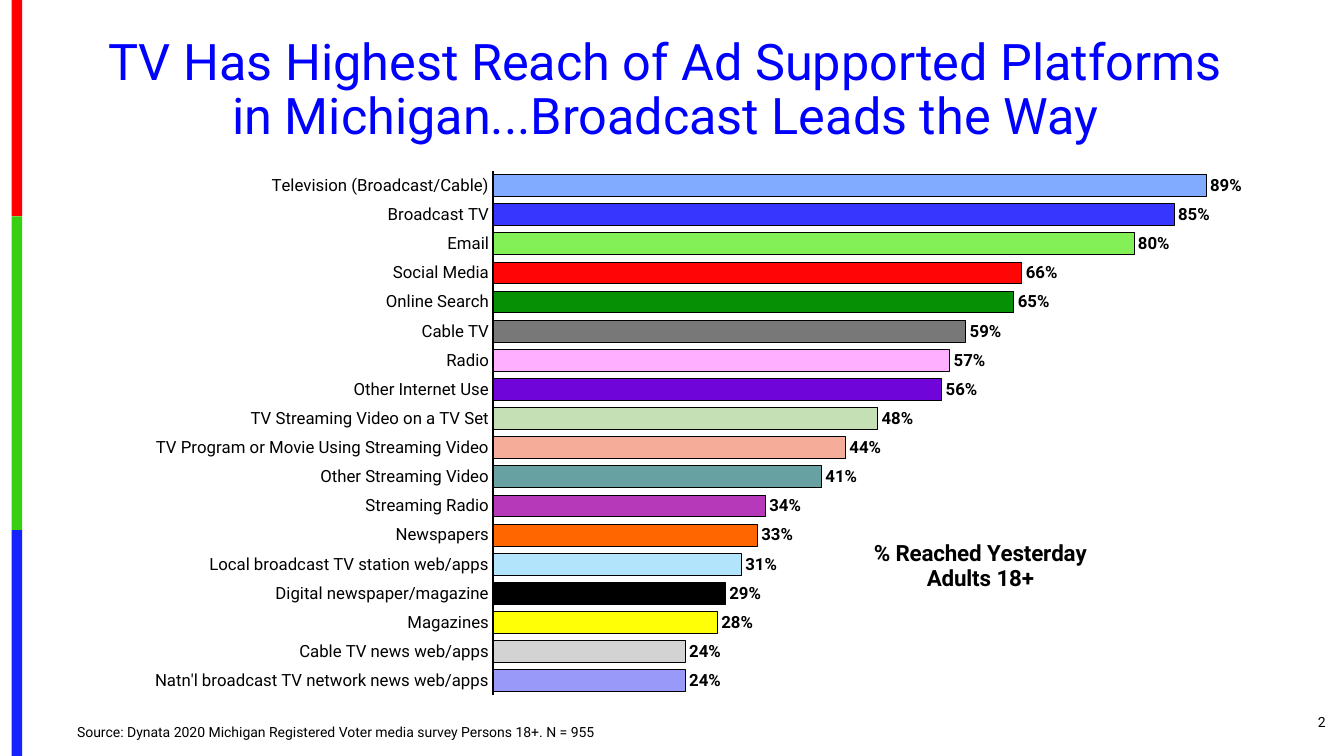
from lxml import etree
from pptx import Presentation
from pptx import util as u
from pptx.chart.data import CategoryChartData
from pptx.dml.color import RGBColor
from pptx.enum import chart as ch, shapes, text
from pptx.oxml.ns import qn

PX = 9525
FACE = "Roboto"
HUES = {"red": "FE0000", "green": "36CF12", "blue": "1322FE",
        "head": "0000FF", "ink": "000000", "base": "CCCCCC"}
ROWS = [
    ("Television (Broadcast/Cable)", 0.89, "80ABFF"),
    ("Broadcast TV", 0.85, "3636FF"),
    ("Email", 0.80, "84F058"),
    ("Social Media", 0.66, "FF0505"),
    ("Online Search", 0.65, "059005"),
    ("Cable TV", 0.59, "787878"),
    ("Radio", 0.57, "FFAFFF"),
    ("Other Internet Use", 0.56, "6F05D9"),
    ("TV Streaming Video on a TV Set", 0.48, "C5E0B4"),
    ("TV Program or Movie Using Streaming Video", 0.44, "F5AD99"),
    ("Other Streaming Video", 0.41, "67A1A1"),
    ("Streaming Radio", 0.34, "B539B8"),
    ("Newspapers", 0.33, "FF6600"),
    ("Local broadcast TV station web/apps", 0.31, "B2E5FC"),
    ("Digital newspaper/magazine", 0.29, "000000"),
    ("Magazines", 0.28, "FFFF05"),
    ("Cable TV news web/apps", 0.24, "D3D3D3"),
    ("Natn'l broadcast TV network news web/apps", 0.24, "9999F9"),
]


def style(font, size, hue="ink", bold=False):
    look = {"name": FACE, "size": u.Pt(size), "bold": bold}
    for key, val in look.items():
        setattr(font, key, val)
    font.color.rgb = RGBColor.from_string(HUES[hue])


def place(node, **spots):
    lay = node.find(qn("c:layout"))
    if lay is None:
        lay = etree.Element(qn("c:layout"))
        node.insert(1 if node.tag == qn("c:title") else 0, lay)
    man = etree.SubElement(lay, qn("c:manualLayout"))
    for key, val in spots.items():
        etree.SubElement(man, qn("c:" + key)).set("val", str(val))


prs = Presentation()
prs.slide_width, prs.slide_height = 1280 * PX, 720 * PX
slide = prs.slides.add_slide(prs.slide_layouts[6])

edges = [0, 206, 505, 720]
for hue, top, end in zip(("red", "green", "blue"), edges, edges[1:]):
    band = slide.shapes.add_shape(shapes.MSO_SHAPE.RECTANGLE,
                                  11 * PX, top * PX, 10 * PX, (end - top) * PX)
    band.shadow.inherit = False
    band.fill.solid()
    band.fill.fore_color.rgb = RGBColor.from_string(HUES[hue])
    band.line.fill.background()

data = CategoryChartData(number_format="0%")
data.categories = [row[0] for row in ROWS]
data.add_series("Series 1", [row[1] for row in ROWS])
chart = slide.shapes.add_chart(ch.XL_CHART_TYPE.BAR_CLUSTERED, 65 * PX, 136 * PX,
                               1176 * PX, 528 * PX, data).chart
style(chart.font, 10)
chart.has_legend = False
chart.has_title = True
frame = chart.chart_title.text_frame
frame.text = "% Reached Yesterday\nAdults 18+"
for para in frame.paragraphs:
    style(para.runs[0].font, 16, bold=True)
chart.chart_title.include_in_layout = False
place(chart.chart_title._element, xMode="edge", yMode="edge", x=0.65, y=0.71)
place(chart._chartSpace.chart.plotArea, layoutTarget="inner", xMode="edge",
      yMode="edge", x=0.344, y=0.051, w=0.649, h=0.946)

cats = chart.category_axis
cats.reverse_order = True
cats.major_tick_mark = ch.XL_TICK_MARK.NONE
cats.format.line.width = u.Pt(1)
cats.format.line.color.rgb = RGBColor.from_string(HUES["ink"])
style(cats.tick_labels.font, 12)
vals = chart.value_axis
for key, val in {"minimum_scale": 0, "maximum_scale": 1, "visible": False,
                 "has_major_gridlines": False}.items():
    setattr(vals, key, val)

plot = chart.plots[0]
plot.gap_width = 34
plot.vary_by_categories = False
plot.has_data_labels = True
tags = plot.data_labels
for key, val in {"show_value": True, "number_format": "0%",
                 "number_format_is_linked": False,
                 "position": ch.XL_LABEL_POSITION.OUTSIDE_END}.items():
    setattr(tags, key, val)
style(tags.font, 12, bold=True)
bars = plot.series[0]
bars.invert_if_negative = False
fills = [(bars.format, HUES["base"])]
fills += [(bars.points[i].format, row[2]) for i, row in enumerate(ROWS)]
for form, tint in fills:
    form.fill.solid()
    form.fill.fore_color.rgb = RGBColor.from_string(tint)
    form.line.width = u.Pt(0.75)
    form.line.color.rgb = RGBColor.from_string(HUES["ink"])

MID, LOW = text.MSO_ANCHOR.MIDDLE, text.MSO_ANCHOR.BOTTOM
ALIGN = text.PP_ALIGN
NOTES = [
    ("TV Has Highest Reach of Ad Supported Platforms\vin Michigan...Broadcast Leads the Way",
     (38, 30, 1192, 114), 36, "head", ALIGN.CENTER, MID),
    ("2", (1168, 670, 104, 38), 10, "ink", ALIGN.RIGHT, MID),
    ("Source: Dynata 2020 Michigan Registered Voter media survey Persons 18+. N = 955",
     (64, 686, 960, 24), 10, "ink", ALIGN.LEFT, LOW),
]
for words, spot, size, hue, side, hold in NOTES:
    frame = slide.shapes.add_textbox(*(n * PX for n in spot)).text_frame
    frame.word_wrap = True
    frame.vertical_anchor = hold
    para = frame.paragraphs[0]
    para.text = words
    para.alignment = side
    para.line_spacing = 0.9
    for run in para.runs:
        style(run.font, size, hue)

prs.save("out.pptx")
